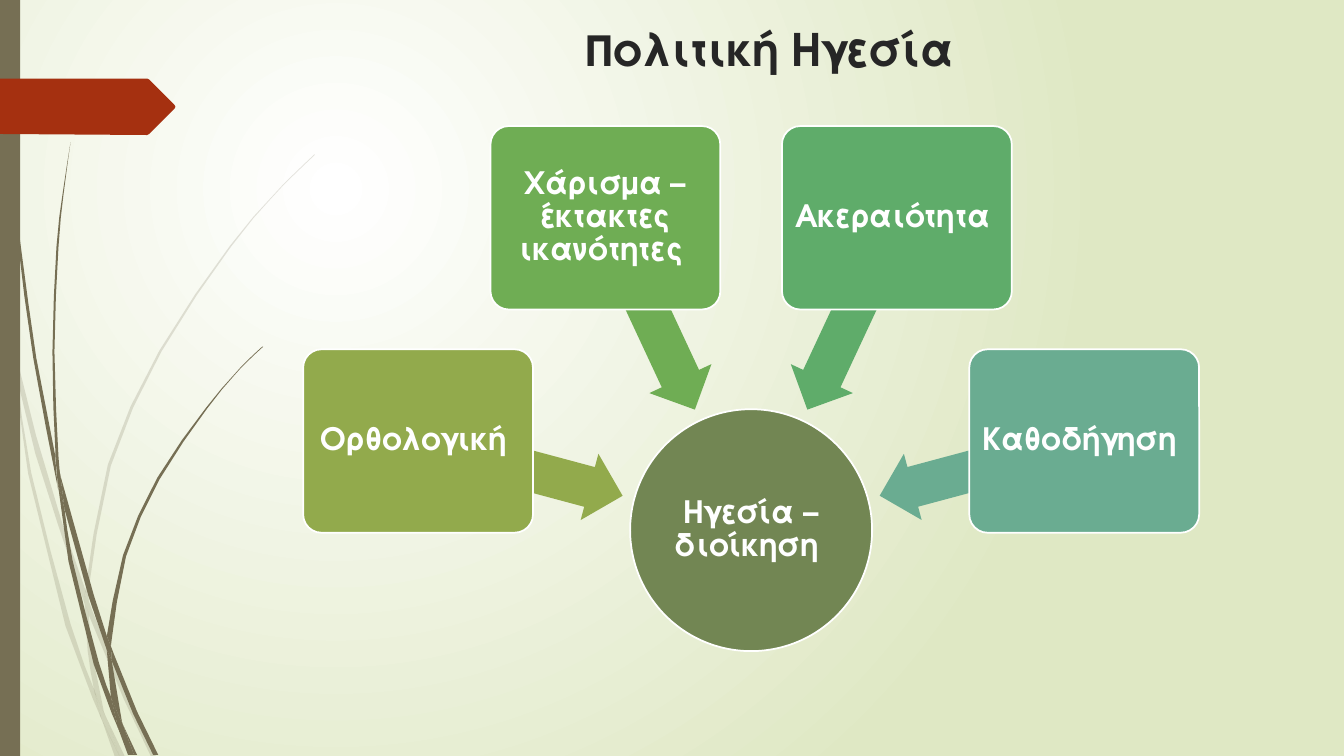
from dataclasses import dataclass
from math import cos, radians, sin

from pptx import Presentation
from pptx.dml.color import RGBColor
from pptx.enum.shapes import MSO_SHAPE as SHAPE
from pptx.enum.text import MSO_ANCHOR as ANCHOR, PP_ALIGN as ALIGN
from pptx.oxml import parse_xml
from pptx.oxml.ns import nsdecls, qn
from pptx.util import Emu, Pt

EMU_PER_PX = 9144
TITLE_ONLY = 5


@dataclass(frozen=True)
class Theme:
    font: str = "TeX Gyre Adventor"
    title_size: int = 32
    label_size: int = 22
    ink: str = "262626"
    white: str = "FFFFFF"
    edge: str = "DFE8C4"
    stem: str = "766F54"
    tag: str = "A53010"
    hub: str = "728653"


THEME = Theme()

FACTORS = [
    ("Ορθολογική ", 195, "92AA4C"),
    ("Χάρισμα – έκτακτες ικανότητες ", 245, "6FAD54"),
    ("Ακεραιότητα ", 295, "5FAC6A"),
    ("Καθοδήγηση ", 345, "6AAC91"),
]

# Each piece of grass is a list of smooth edges that together close its outline.
PALE_GRASS = [
    [[(11, 350), (9, 322), (0, 282)], [(0, 299), (10, 344)]],
    [[(17, 376), (35, 450), (58, 522), (84, 599)],
     [(85, 586), (62, 520), (36, 433), (14, 345)]],
    [[(92, 607), (88, 596)], [(88, 610), (123, 694), (150, 751)],
     [(155, 751), (127, 692), (92, 607)]],
    [[(119, 751), (124, 751)], [(105, 711), (119, 751)]],
    [[(93, 683), (70, 619), (31, 469), (17, 376), (11, 350)],
     [(28, 470), (65, 621), (92, 693), (101, 714)], [(99, 707), (93, 683)]],
    [[(84, 599), (87, 646), (93, 683), (96, 692), (105, 711)],
     [(103, 706), (91, 646), (88, 610), (88, 608)]],
    [[(88, 584), (110, 462), (160, 349), (229, 245), (268, 198), (290, 175), (312, 154)],
     [(312, 153), (289, 175), (268, 197), (228, 244), (158, 348), (107, 461),
      (85, 584), (85, 586)], [(88, 596), (88, 584)]],
    [[(101, 714), (114, 751)], [(119, 751), (101, 714)]],
    [[(88, 608), (88, 610), (88, 596)], [(85, 586), (84, 599)]],
    [[(96, 692), (93, 683), (99, 707), (101, 714), (119, 751)],
     [(119, 751), (105, 711), (96, 692)]],
]
DARK_GRASS = [
    [[(7, 110), (17, 233), (33, 355), (56, 477), (57, 481)], [(55, 457), (55, 453)],
     [(36, 355), (19, 232), (8, 109), (5, 48), (4, 0)], [(3, 0), (4, 48), (7, 110)]],
    [[(88, 592), (106, 645)], [(106, 633), (106, 631), (93, 590), (60, 472)],
     [(64, 505), (88, 592)]],
    [[(113, 649), (110, 641)], [(111, 656), (132, 708), (152, 749)],
     [(157, 749), (136, 706), (113, 649)]],
    [[(110, 691), (98, 657), (72, 556), (64, 505), (57, 477)],
     [(68, 557), (93, 659), (111, 708), (117, 722)], [(116, 717), (110, 691)]],
    [[(60, 472), (58, 453), (54, 349), (58, 245), (63, 193), (70, 141)],
     [(70, 141), (62, 193), (56, 245), (52, 349), (55, 449), (60, 472)]],
    [[(133, 749), (136, 749)], [(122, 719), (133, 749)]],
    [[(57, 477), (64, 505)], [(60, 472), (55, 449)], [(55, 453), (57, 477)]],
    [[(111, 633), (125, 552), (158, 476), (205, 406), (231, 374), (245, 359), (261, 344)],
     [(260, 344), (245, 358), (231, 373), (204, 405), (156, 474), (122, 551),
      (106, 631)], [(110, 641), (111, 633)]],
    [[(117, 722), (127, 749)], [(131, 749), (117, 722)]],
    [[(106, 645), (110, 691), (116, 706), (122, 719)],
     [(121, 716), (111, 656), (109, 651), (106, 645)]],
    [[(106, 645), (109, 651), (111, 656)], [(110, 641), (106, 631)],
     [(106, 633), (106, 645)]],
    [[(116, 706), (110, 691), (116, 717), (117, 722), (130, 749)],
     [(133, 749), (122, 719), (116, 706)]],
]
TAG = [(174, 106), (173, 108), (148, 133), (146, 134), (0, 133), (0, 78),
       (146, 78), (148, 79), (173, 104)]


def px(n):
    return Emu(round(n * EMU_PER_PX))


def paint(sp, color, line=None, alpha=None):
    sp.shadow.inherit = False
    sp.fill.solid()
    sp.fill.fore_color.rgb = RGBColor.from_string(color)
    if alpha is not None:
        clr = sp._element.spPr.find(".//" + qn("a:srgbClr"))
        clr.append(parse_xml(f'<a:alpha {nsdecls("a")} val="{alpha * 1000}"/>'))
    if line:
        sp.line.color.rgb = RGBColor.from_string(line)
        sp.line.width = Pt(1.25)
    else:
        sp.line.fill.background()


def add_preset(shapes, kind, box, color, line=None, adj=()):
    sp = shapes.add_shape(kind, *map(px, box))
    for i, value in enumerate(adj):
        sp.adjustments[i] = value
    paint(sp, color, line)
    return sp


def add_outline(shapes, points, left, top, color, alpha=None):
    points = [(px(left + x), px(top + y)) for x, y in points]
    fb = shapes.build_freeform(*points[0])
    fb.add_line_segments(points[1:], close=True)
    paint(fb.convert_to_shape(), color, alpha=alpha)


def write(sp, text, size, color, anchor=ANCHOR.MIDDLE, spacing=1.0, inset=None):
    tf = sp.text_frame
    tf.word_wrap = True
    tf.vertical_anchor = anchor
    if inset is not None:
        tf.margin_left = tf.margin_right = px(inset)
        tf.margin_top = tf.margin_bottom = px(inset)
    p = tf.paragraphs[0]
    p.alignment = ALIGN.CENTER
    p.line_spacing = spacing
    r = p.add_run()
    r.text = text
    r.font.name = THEME.font
    r.font.size = Pt(size)
    r.font.bold = True
    r.font.color.rgb = RGBColor.from_string(color)


def centred(cx, cy, w, h):
    return cx - w / 2, cy - h / 2, w, h


def smooth(edge):
    """Add a Catmull-Rom midpoint between the points of a bent edge."""
    if len(edge) < 5:
        return edge
    padded = [edge[0], *edge, edge[-1]]
    curve = []
    for a, b, c, d in zip(padded, padded[1:], padded[2:], padded[3:]):
        curve += [b, [(9 * (q + r) - p - u) / 16 for p, q, r, u in zip(a, b, c, d)]]
    return curve + [edge[-1]]


def add_grass(s, pieces, left, top, alpha=None):
    shapes = s.shapes.add_group_shape().shapes
    for edges in pieces:
        outline = [point for edge in edges for point in smooth(edge)]
        add_outline(shapes, outline, left, top, THEME.stem, alpha)


def set_background(s):
    s.background.fill.gradient()
    grad = s._element.find(".//" + qn("a:gradFill"))
    grad.getparent().replace(grad, parse_xml(
        f'<a:gradFill {nsdecls("a")} rotWithShape="1"><a:gsLst>'
        f'<a:gs pos="0"><a:srgbClr val="{THEME.white}"/></a:gs>'
        f'<a:gs pos="100000"><a:srgbClr val="{THEME.edge}"/></a:gs></a:gsLst>'
        '<a:path path="circle"><a:fillToRect l="50000" t="50000" r="100000" '
        'b="100000"/></a:path></a:gradFill>'))


def add_decoration(s, left, top, height):
    add_grass(s, PALE_GRASS, left, top, alpha=20)
    add_grass(s, DARK_GRASS, left, top)
    add_preset(s.shapes, SHAPE.RECTANGLE, (left, top, 20, height), THEME.stem)
    add_outline(s.shapes, TAG, left, top, THEME.tag)


def add_title(s, text, box):
    sp = s.shapes.title
    sp.left, sp.top, sp.width, sp.height = map(px, box)
    write(sp, text, THEME.title_size, THEME.ink, anchor=ANCHOR.TOP)


def add_converging_diagram(s, hub_text, factors, cx, cy):
    """Place the factors on an arc round a hub, each with an arrow to it."""
    arrow_radius, box_radius = 237, 342
    label = dict(size=THEME.label_size, color=THEME.white, spacing=0.9)
    shapes = s.shapes.add_group_shape().shapes
    hub = add_preset(shapes, SHAPE.OVAL, centred(cx, cy, 240, 240),
                     THEME.hub, THEME.white)
    write(hub, hub_text, inset=2, **label)
    for text, angle, color in factors:
        dx, dy = cos(radians(angle)), sin(radians(angle))
        arrow = add_preset(
            shapes, SHAPE.LEFT_ARROW,
            centred(cx + arrow_radius * dx, cy + arrow_radius * dy, 210, 68),
            color, adj=[0.6, 0.5])
        arrow.rotation = angle
        box = add_preset(
            shapes, SHAPE.ROUNDED_RECTANGLE,
            centred(cx + box_radius * dx, cy + box_radius * dy, 228, 182),
            color, THEME.white, adj=[0.1])
        write(box, text, inset=5, **label)


def main():
    prs = Presentation()
    prs.slide_width, prs.slide_height = px(1333), px(750)
    s = prs.slides.add_slide(prs.slide_layouts[TITLE_ONLY])
    set_background(s)
    add_decoration(s, 0, 0, 750)
    add_title(s, "Πολιτική Ηγεσία ", (282, 17, 975, 72))
    add_converging_diagram(s, "Ηγεσία – διοίκηση ", FACTORS, 745, 526)
    prs.save("out.pptx")


if __name__ == "__main__":
    main()
